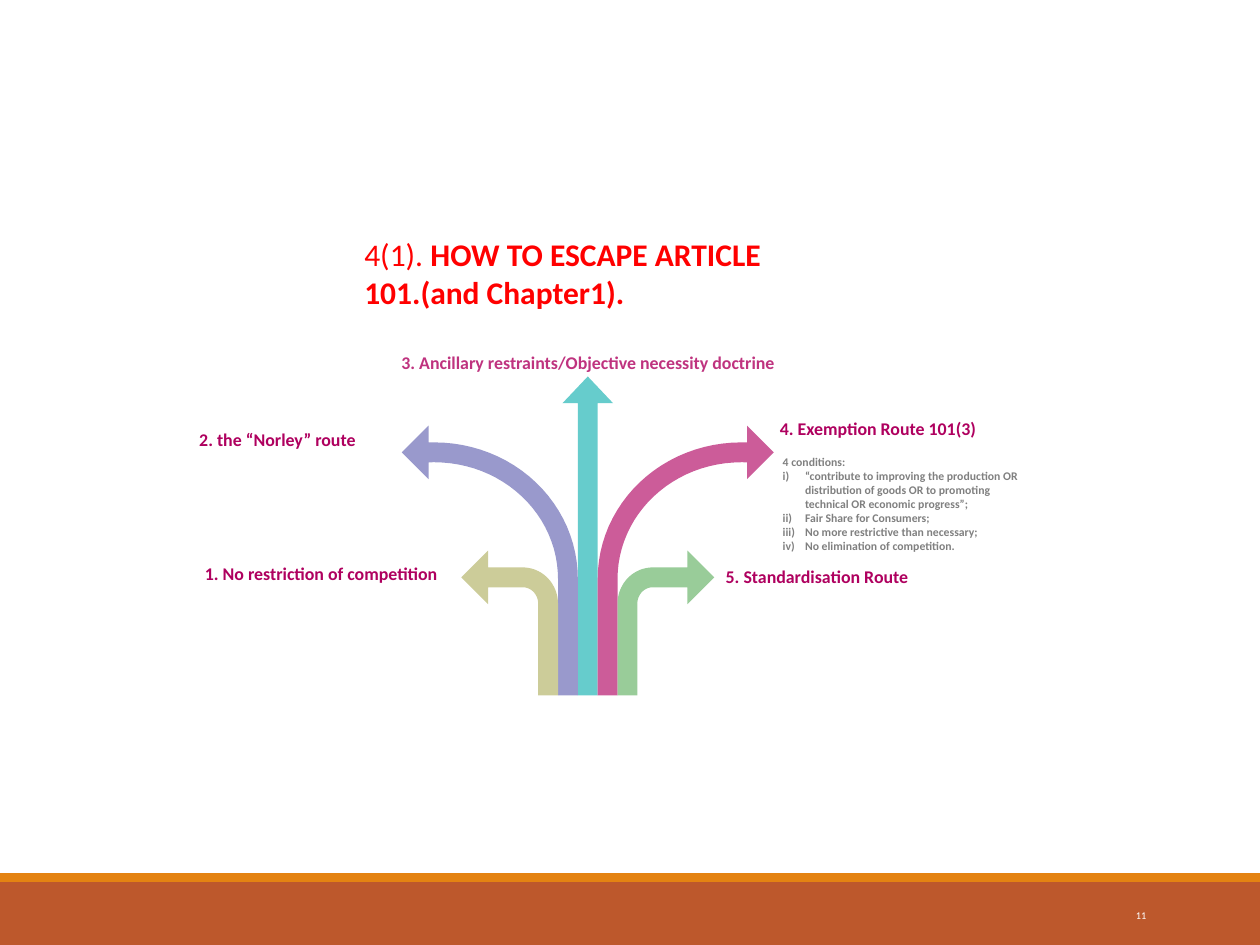
from math import cos, pi, sin

from lxml import etree
from pptx import Presentation
from pptx.dml.color import RGBColor
from pptx.enum.shapes import MSO_SHAPE
from pptx.enum.text import MSO_ANCHOR, MSO_AUTO_SIZE, PP_ALIGN
from pptx.oxml.ns import qn
from pptx.util import Cm, Pt

LEFT, CENTER, RIGHT = PP_ALIGN.LEFT, PP_ALIGN.CENTER, PP_ALIGN.RIGHT
TOP, MIDDLE = MSO_ANCHOR.TOP, MSO_ANCHOR.MIDDLE
NO_AUTOFIT = MSO_AUTO_SIZE.NONE
RECTANGLE = MSO_SHAPE.RECTANGLE
TITLE_ONLY = 5
FONT = "Calibri"
COLORS = {
    "title": "FF0000", "label": "AF005F", "top_label": "BF337F",
    "conditions": "808080", "white": "FFFFFF",
    "footer": "BD582C", "stripe": "E48312",
    "teal": "66CCCC", "violet": "9999CC", "pink": "CC5C99",
    "sand": "CCCC99", "green": "99CC99",
}
CONDITIONS = [
    "“contribute to improving the production OR distribution of goods "
    "OR to promoting technical OR economic progress”;",
    "Fair Share for Consumers;",
    "No more restrictive than necessary;",
    "No elimination of competition.",
]

# Arrow proportions in cm
SHAFT = 0.4
HEAD_LENGTH = 0.54
HEAD_WIDTH = 1.08
CURVE_STEPS = 24


def rgb(name):
    return RGBColor.from_string(COLORS[name])


def fill_plain(shape, color):
    shape.fill.solid()
    shape.fill.fore_color.rgb = rgb(color)
    shape.line.fill.background()
    shape.shadow.inherit = False


def style_paragraph(paragraph, size, color, align=LEFT, bold=None):
    paragraph.alignment = align
    font = paragraph.font
    font.name, font.size, font.bold = FONT, Pt(size), bold
    font.color.rgb = rgb(color)


def add_text(slide, box, lines, size, color, align=LEFT, bold=True,
             wrap=False, anchor=TOP):
    shape = slide.shapes.add_textbox(*map(Cm, box))
    frame = shape.text_frame
    frame.word_wrap = wrap
    frame.vertical_anchor = anchor
    frame.margin_left = frame.margin_right = Cm(0.15)
    frame.margin_top = frame.margin_bottom = Cm(0.08)
    frame.text = "\n".join(lines)
    for paragraph in frame.paragraphs:
        style_paragraph(paragraph, size, color, align, bold)
    return frame


def add_title(slide, box):
    title = slide.shapes.title
    title.left, title.top, title.width, title.height = map(Cm, box)
    frame = title.text_frame
    frame.word_wrap = True
    frame.auto_size = NO_AUTOFIT
    frame.vertical_anchor = TOP
    paragraph = frame.paragraphs[0]
    style_paragraph(paragraph, 18, "title")
    paragraph.add_run().text = "4(1). "
    heading = paragraph.add_run()
    heading.text = "HOW TO ESCAPE ARTICLE 101.(and Chapter1)."
    heading.font.bold = True


def add_footer(slide, box):
    left, top, width, height = box
    stripe = 0.18
    for color, y, h in (("footer", top + stripe, height - stripe),
                        ("stripe", top, stripe)):
        bar = slide.shapes.add_shape(RECTANGLE, Cm(left), Cm(y), Cm(width), Cm(h))
        fill_plain(bar, color)
    add_text(slide, (left + 20.52, top + 0.35, 2.74, 1.02), ["11"], 5.9, "white",
             RIGHT, bold=False, wrap=True, anchor=MIDDLE)


def add_outline(slide, axis, base, side, points, color):
    """Draw points given as (distance from axis, height above base)."""
    vertices = [(Cm(axis + side * x), Cm(base - y)) for x, y in points]
    builder = slide.shapes.build_freeform(*vertices[0])
    builder.add_line_segments(vertices[1:], close=True)
    fill_plain(builder.convert_to_shape(), color)


def quarter_arc(center, radius_x, radius_y):
    """Points from the stem side of a bend up to its top."""
    angles = [pi / 2 * step / CURVE_STEPS for step in range(CURVE_STEPS + 1)]
    return [(center[0] - radius_x * cos(angle), center[1] + radius_y * sin(angle))
            for angle in angles]


def bent_arrow(stem, tip, center):
    """Outline of an arrow that rises at stem and bends outwards to tip."""
    tip_x, tip_y = tip
    neck = tip_x - HEAD_LENGTH
    outer_x = center[0] - stem
    outer_y = tip_y + SHAFT / 2 - center[1]
    outer = quarter_arc(center, outer_x, outer_y)
    inner = quarter_arc(center, outer_x - SHAFT, outer_y - SHAFT)
    head = [(neck, tip_y + SHAFT / 2), (neck, tip_y + HEAD_WIDTH / 2), tip,
            (neck, tip_y - HEAD_WIDTH / 2), (neck, tip_y - SHAFT / 2)]
    return [(stem, 0), *outer, *head, *reversed(inner), (stem + SHAFT, 0)]


def add_arrows(slide, box):
    left, top, width, height = box
    axis, base = left + width / 2, top + height

    # Straight arrow in the middle
    half, head, neck = SHAFT / 2, 0.51, height - HEAD_LENGTH
    straight = [(-half, 0), (-half, neck), (-head, neck), (0, height),
                (head, neck), (half, neck), (half, 0)]
    add_outline(slide, axis, base, 1, straight, "teal")

    # Mirrored pairs: tall bends, then short bends
    tall = bent_arrow(half, (width / 2, 4.9), (3.09, 2.35))
    short = bent_arrow(half + SHAFT, (2.55, 2.38), (1.31, 1.85))
    for points, colors in ((tall, ("violet", "pink")), (short, ("sand", "green"))):
        for side, color in zip((-1, 1), colors):
            add_outline(slide, axis, base, side, points, color)


def add_labels(slide, box):
    left, top = box[:2]
    labels = [
        ("1. No restriction of competition", (0.13, 4.27, 5, 1.02), RIGHT, "label"),
        ("2. the “Norley” route", (0, 1.56, 3.48, 1.02), RIGHT, "label"),
        ("3. Ancillary restraints/Objective necessity doctrine",
         (4.09, 0, 7.85, 1.24), CENTER, "top_label"),
        ("4. Exemption Route 101(3)", (11.73, 1.34, 5.13, 0.58), LEFT, "label"),
        ("5. Standardisation Route", (10.64, 4.32, 3.99, 1.02), LEFT, "label"),
    ]
    for text, (x, y, width, height), align, color in labels:
        add_text(slide, (left + x, top + y, width, height), [text], 10.2, color, align)


def add_conditions(slide, box):
    frame = add_text(slide, box, ["4 conditions:", *CONDITIONS], 6.7,
                     "conditions", wrap=True)
    indent = Cm(0.45)
    for paragraph in frame.paragraphs[1:]:
        properties = paragraph._p.get_or_add_pPr()
        properties.set("marL", str(indent))
        properties.set("indent", str(-indent))
        numbering = etree.Element(qn("a:buAutoNum"), type="romanLcParenR")
        properties.insert_element_before(numbering, "a:tabLst", "a:defRPr", "a:extLst")


def main():
    presentation = Presentation()
    presentation.slide_width, presentation.slide_height = Cm(25.4), Cm(19.05)
    slide = presentation.slides.add_slide(presentation.slide_layouts[TITLE_ONLY])
    add_footer(slide, (0, 17.6, 25.4, 1.45))
    add_arrows(slide, (8.1, 7.59, 7.5, 6.43))
    add_labels(slide, (3.84, 7, 16.9, 5.4))
    add_conditions(slide, (15.63, 9.09, 5.2, 2.16))
    add_title(slide, (7.09, 4.62, 9.53, 1.8))
    presentation.save("out.pptx")


if __name__ == "__main__":
    main()
